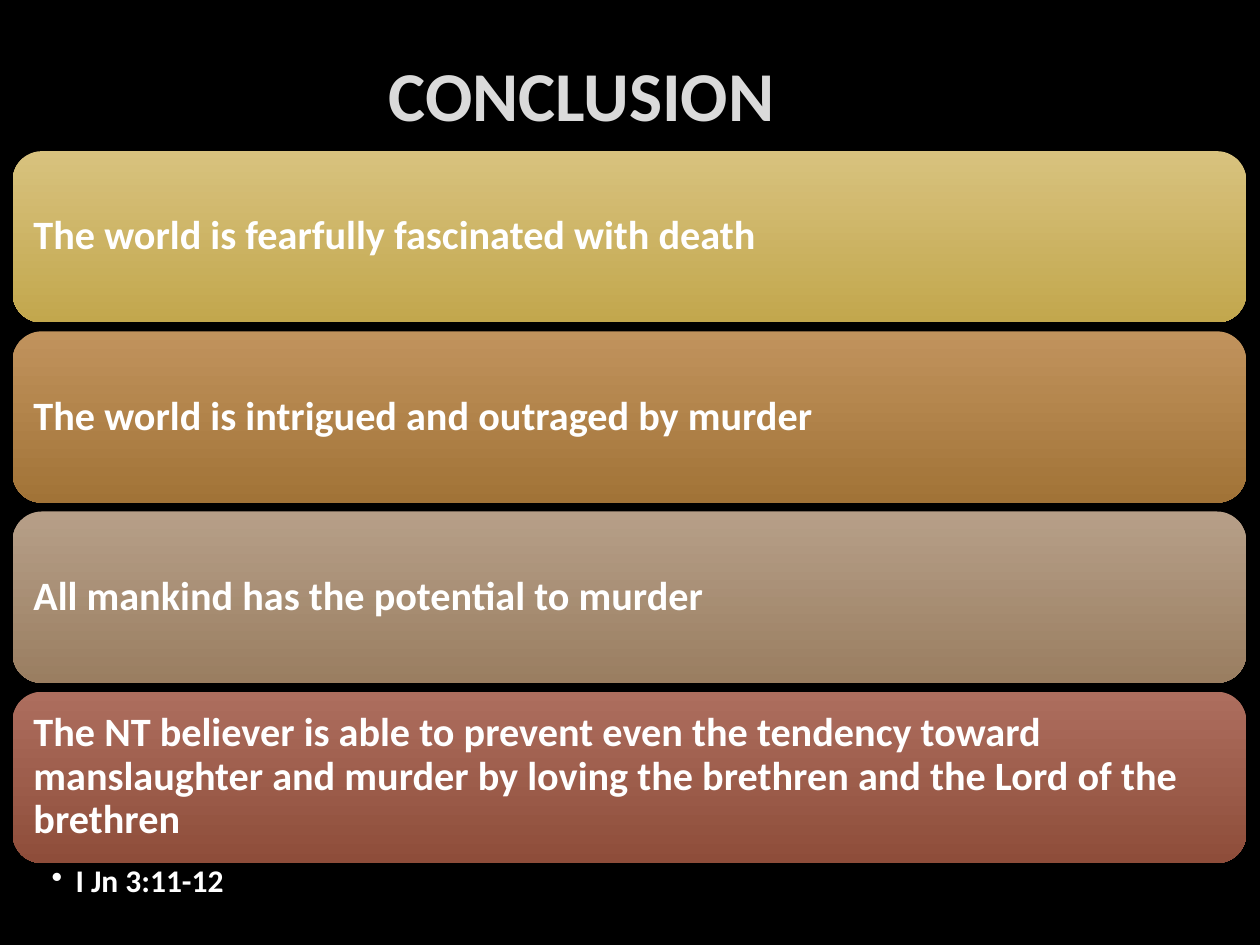
from lxml import etree
from pptx import Presentation
from pptx.dml.color import RGBColor
from pptx.enum.shapes import MSO_SHAPE
from pptx.enum.text import MSO_ANCHOR, PP_ALIGN
from pptx.oxml import parse_xml
from pptx.oxml.ns import nsdecls, qn
from pptx.util import Inches, Pt

ROUNDED = MSO_SHAPE.ROUNDED_RECTANGLE
MIDDLE, TOP = MSO_ANCHOR.MIDDLE, MSO_ANCHOR.TOP
LEFT, CENTER = PP_ALIGN.LEFT, PP_ALIGN.CENTER

THEME = {
    "font": "Calibri",
    "background": "000000",
    "title": "DADADA",
    "title_outline": "404040",
    "body": "FFFFFF",
    "title_size": 40,
    "point_size": 23,
    "verse_size": 18,
}
POINTS = [
    ("The world is fearfully fascinated with death", "D8C27E", "C2A74D"),
    ("The world is intrigued and outraged by murder", "C1935D", "A17337"),
    ("All mankind has the potential to murder", "B69F88", "9A7E61"),
    ("The NT believer is able to prevent even the tendency toward manslaughter "
     "and murder by loving the brethren and the Lord of the brethren",
     "AD6E5E", "8E4D3A"),
]

# Grid: one column, four rows of equal pitch
COLUMN_LEFT, COLUMN_WIDTH = Inches(0.1), Inches(9.79)
FIRST_ROW, ROW_PITCH, ROW_HEIGHT = Inches(1.2), Inches(1.43), Inches(1.36)


def write(shape, text, size, color, margins, anchor=MIDDLE, align=LEFT, spacing=0.9):
    """Fill the shape with one bold paragraph; margins are left, top, right, bottom."""
    frame = shape.text_frame
    left, top, right, bottom = map(Inches, margins)
    layout = {"word_wrap": True, "vertical_anchor": anchor, "margin_left": left,
              "margin_top": top, "margin_right": right, "margin_bottom": bottom}
    for name, value in layout.items():
        setattr(frame, name, value)
    paragraph = frame.paragraphs[0]
    paragraph.alignment, paragraph.line_spacing = align, spacing
    run = paragraph.add_run()
    run.text = text
    for name, value in {"name": THEME["font"], "size": Pt(size), "bold": True}.items():
        setattr(run.font, name, value)
    run.font.color.rgb = RGBColor.from_string(color)
    return paragraph


prs = Presentation()
prs.slide_width, prs.slide_height = Inches(10), Inches(7.5)
slide = prs.slides.add_slide(prs.slide_layouts[6])
slide.background.fill.solid()
slide.background.fill.fore_color.rgb = RGBColor.from_string(THEME["background"])

# Title with a faint outline
title = slide.shapes.add_textbox(Inches(0.59), Inches(0.21), Inches(8.49), Inches(1.06))
heading = write(title, "CONCLUSION\t", THEME["title_size"], THEME["title"],
                (0.1, 0.05, 0.1, 0.05), align=CENTER, spacing=1.0)
outline = parse_xml(
    f'<a:ln {nsdecls("a")} w="9525"><a:solidFill><a:srgbClr val="{THEME["title_outline"]}">'
    '<a:alpha val="10000"/></a:srgbClr></a:solidFill></a:ln>')
heading.runs[0].font.fill  # the run properties exist before the outline goes in
heading.runs[0]._r.find(qn("a:rPr")).insert(0, outline)

# Points
for row, (statement, light, dark) in enumerate(POINTS):
    bar = slide.shapes.add_shape(ROUNDED, COLUMN_LEFT, FIRST_ROW + row * ROW_PITCH,
                                 COLUMN_WIDTH, ROW_HEIGHT)
    bar.adjustments[0] = 0.17
    bar.shadow.inherit = False
    bar.line.fill.background()
    bar.fill.gradient()
    bar.fill.gradient_angle = 270
    for stop, color, position in zip(bar.fill.gradient_stops, (light, dark), (0, 1)):
        stop.color.rgb = RGBColor.from_string(color)
        stop.position = position
    write(bar, statement, THEME["point_size"], THEME["body"], (0.1,) * 4)

# Bulleted verse under the last point
verse_box = slide.shapes.add_textbox(COLUMN_LEFT, Inches(6.84), COLUMN_WIDTH, Inches(0.42))
verse = write(verse_box, "I Jn 3:11-12", THEME["verse_size"], THEME["body"],
              (0.31, 0.03, 0.18, 0.03), anchor=TOP)
verse_format = verse._p.get_or_add_pPr()
for name, value in {"marL": Inches(0.19), "indent": -Inches(0.19), "lvl": 1}.items():
    verse_format.set(name, str(int(value)))
etree.SubElement(verse_format, qn("a:buChar")).set("char", "•")

prs.save("out.pptx")
